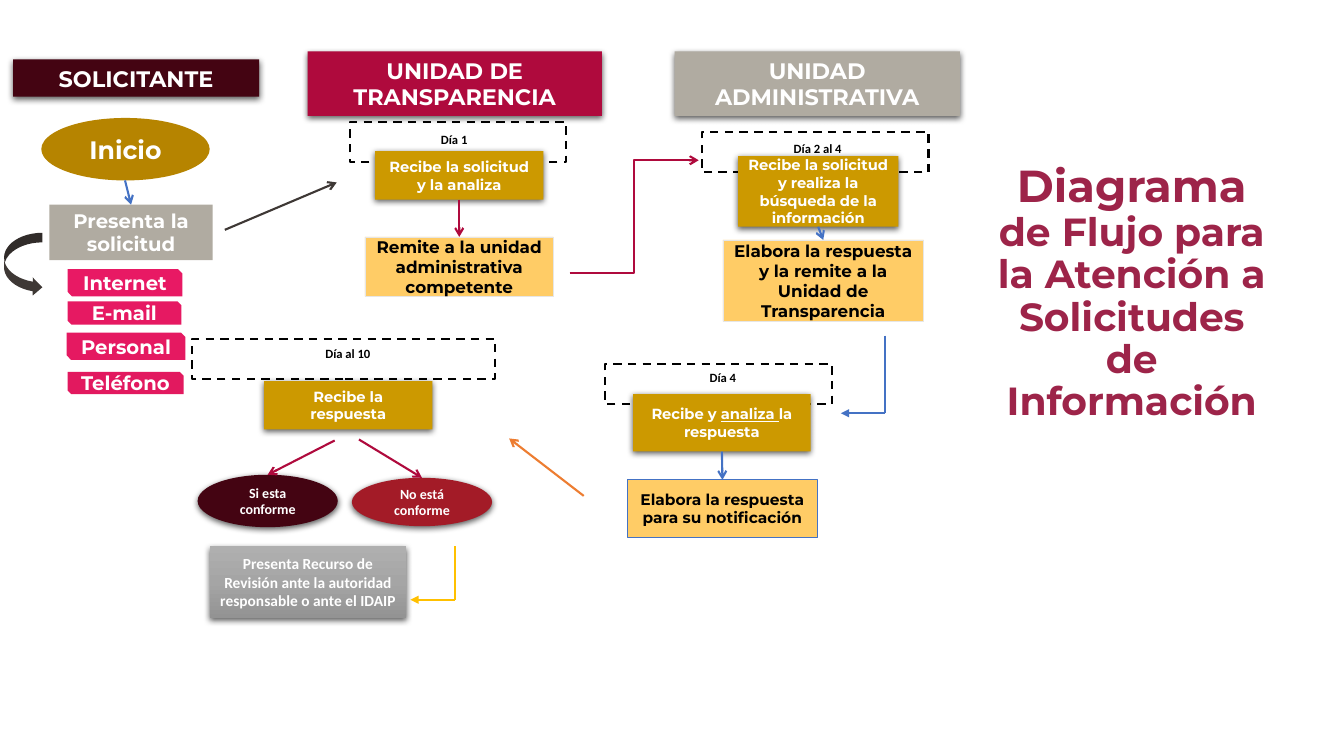
from copy import deepcopy
from lxml import etree
from pptx import Presentation
from pptx.dml.color import RGBColor
from pptx.enum.dml import MSO_LINE
from pptx.enum.shapes import MSO_CONNECTOR as CXN, MSO_SHAPE as SHAPE
from pptx.enum.text import MSO_ANCHOR as ANCHOR, MSO_AUTO_SIZE as AUTO, PP_ALIGN as ALIGN
from pptx.oxml.ns import qn
from pptx.util import Inches, Pt

COLORS = {
    "white": "FFFFFF", "black": "000000", "wine": "440412", "crimson": "AF0A3D",
    "red": "A31B27", "stone": "B0ABA1", "bronze": "B68400", "gold": "CC9900",
    "sand": "FFCC66", "pale": "E6E6E6", "blue": "4472C4", "dark": "3E3835",
    "orange": "ED7D31", "yellow": "FFC000", "title": "9D2449",
    "pink1": "E81964", "pink2": "E61962", "pink3": "E51961", "pink4": "E2195F",
    "gray1": "AFAFAF", "gray2": "A5A5A5", "gray3": "939393",
}
RGB = {name: RGBColor.from_string(value) for name, value in COLORS.items()}


def write(sp, text, size, color="white", font="Montserrat", anchor=ANCHOR.MIDDLE):
    """Centred bold text; parts between bars are underlined."""
    tf = sp.text_frame
    tf.word_wrap = True
    tf.vertical_anchor = anchor
    p = tf.paragraphs[0]
    p.alignment = ALIGN.CENTER
    for i, part in enumerate(text.split("|")):
        r = p.add_run()
        r.text = part
        for key, value in {"name": font, "size": Pt(size), "bold": True}.items():
            setattr(r.font, key, value)
        r.font.color.rgb = RGB[color]
        if i % 2:
            r.font.underline = True


def add_box(preset, box, fill=None, line=None, width=0.5, shadow=False):
    sp = shapes.add_shape(preset, *map(Inches, box))
    sp.shadow.inherit = False
    if fill:
        sp.fill.solid()
        sp.fill.fore_color.rgb = RGB[fill]
    else:
        sp.fill.background()
    if line:
        sp.line.color.rgb = RGB[line]
        sp.line.width = Pt(width)
    else:
        sp.line.fill.background()
    if shadow:
        effects = sp._element.spPr.find(qn("a:effectLst"))
        outer = etree.SubElement(effects, qn("a:outerShdw"), blurRad="57150",
                                 dist="19050", dir="5400000", algn="ctr", rotWithShape="0")
        color = etree.SubElement(outer, qn("a:srgbClr"), val=COLORS["black"])
        etree.SubElement(color, qn("a:alpha"), val="63000")
    return sp


prs = Presentation()
prs.slide_width, prs.slide_height = Inches(13.33), Inches(7.5)
slide = prs.slides.add_slide(prs.slide_layouts[5])
shapes = slide.shapes

# Title
title = shapes.title
for key, value in zip(("left", "top", "width", "height"), (9.77, 0.89, 2.91, 3.37)):
    setattr(title, key, Inches(value))
write(title, "Diagrama de Flujo para la Atención a Solicitudes de Información",
      28, "title", anchor=ANCHOR.BOTTOM)
title.text_frame.auto_size = AUTO.NONE
p = title.text_frame.paragraphs[0]
p.line_spacing = 0.9
rest = p.runs[0]
first = deepcopy(rest._r)
rest._r.addprevious(first)
p.runs[0].text = "Diagrama"
p.runs[0].font.size = Pt(32)
rest.text = rest.text.removeprefix("Diagrama")

# Dashed day frames
for box in [(3.47, 1.21, 2.14, 0.4), (6.96, 1.31, 2.25, 0.4),
            (6, 3.61, 2.25, 0.4), (1.9, 3.36, 3.01, 0.4)]:
    add_box(SHAPE.RECTANGLE, box, line="black", width=1.5).line.dash_style = MSO_LINE.DASH

# Column headers
for text, box, fill in [
    ("SOLICITANTE", (0.13, 0.59, 2.44, 0.37), "wine"),
    ("UNIDAD DE TRANSPARENCIA", (3.05, 0.51, 2.92, 0.64), "crimson"),
    ("UNIDAD ADMINISTRATIVA", (6.69, 0.51, 2.83, 0.64), "stone"),
]:
    write(add_box(SHAPE.RECTANGLE, box, fill, shadow=True), text, 16)

# Applicant: start, request and channels
start = add_box(SHAPE.OVAL, (0.41, 1.17, 1.67, 0.62), "bronze")
write(start, "Inicio", 18)
request = add_box(SHAPE.RECTANGLE, (0.49, 2.03, 1.62, 0.55), "stone")
write(request, "Presenta la solicitud", 14)
for text, box, fill in [
    ("Internet", (0.67, 2.67, 1.14, 0.27), "pink1"),
    ("E-mail", (0.67, 2.99, 1.13, 0.23), "pink2"),
    ("Personal", (0.66, 3.3, 1.18, 0.27), "pink3"),
    ("Teléfono", (0.67, 3.69, 1.15, 0.22), "pink4"),
]:
    write(add_box(SHAPE.SNIP_2_DIAG_RECTANGLE, box, fill), text, 14)
curved = add_box(SHAPE.CURVED_RIGHT_ARROW, (0.04, 2.31, 0.38, 0.63), "dark")
for i, value in enumerate((0.25, 0.47, 0.25)):
    curved.adjustments[i] = value

# Gold steps
steps = {}
for key, text, box in [
    ("receive", "Recibe la solicitud y la analiza", (3.72, 1.5, 1.67, 0.48)),
    ("search", "Recibe la solicitud y realiza la búsqueda de la información",
     (7.32, 1.55, 1.59, 0.7)),
    ("analyse", "Recibe y |analiza |la respuesta", (6.28, 3.91, 1.76, 0.57)),
    ("answer", "Recibe la respuesta", (2.62, 3.78, 1.67, 0.48)),
]:
    steps[key] = add_box(SHAPE.RECTANGLE, box, "gold", shadow=True)
    write(steps[key], text, 10.5)

# Sand steps
for key, text, box, line, size in [
    ("forward", "Remite a la unidad administrativa competente",
     (3.62, 2.35, 1.87, 0.59), "pale", 12),
    ("draft", "Elabora la respuesta y la remite a la Unidad de Transparencia",
     (7.17, 2.38, 1.99, 0.81), "pale", 12),
    ("notify", "Elabora la respuesta para su notificación",
     (6.22, 4.76, 1.89, 0.57), "blue", 11),
]:
    steps[key] = add_box(SHAPE.RECTANGLE, box, "sand", line)
    write(steps[key], text, size, "black")

# Outcomes
for key, text, box, fill in [
    ("no", "No está conforme", (3.49, 4.74, 1.39, 0.48), "red"),
    ("yes", "Si esta conforme", (1.96, 4.71, 1.39, 0.52), "wine"),
]:
    steps[key] = add_box(SHAPE.OVAL, box, fill, shadow=True)
    write(steps[key], text, 10, font="Calibri")

# Appeal with a three-stop gradient
appeal = add_box(SHAPE.RECTANGLE, (2.08, 5.42, 1.95, 0.71), "gray2", shadow=True)
write(appeal, "Presenta Recurso de Revisión ante la autoridad responsable o ante el IDAIP",
      11, font="Calibri")
appeal.fill.gradient()
appeal.fill.gradient_angle = 270
stops = appeal._element.spPr.find(qn("a:gradFill")).find(qn("a:gsLst"))
stops.insert(1, deepcopy(stops[0]))
for stop, position, color in zip(appeal.fill.gradient_stops, (0, 0.5, 1),
                                 ("gray1", "gray2", "gray3")):
    stop.position = position
    stop.color.rgb = RGB[color]

# Connectors: start, end, colour, head, joined shapes
for begin, end, color, head, source, target in [
    ((1.24, 1.79), (1.3, 2.03), "blue", "arrow", None, request),
    ((2.23, 2.28), (3.34, 1.81), "dark", "arrow", None, None),
    ((4.55, 1.98), (4.56, 2.35), "crimson", "arrow", steps["receive"], steps["forward"]),
    ((5.65, 2.71), (6.93, 1.59), "crimson", "elbow", None, None),
    ((8.12, 2.25), (8.17, 2.38), "blue", "arrow", steps["search"], steps["draft"]),
    ((8.78, 3.33), (8.78, 4.1), "blue", None, None, None),
    ((8.78, 4.1), (8.34, 4.1), "blue", "triangle", None, None),
    ((7.16, 4.48), (7.16, 4.76), "blue", "arrow", steps["analyse"], steps["notify"]),
    ((5.79, 4.92), (5.05, 4.35), "orange", "arrow", None, None),
    ((3.32, 4.37), (2.66, 4.71), "crimson", "arrow", None, steps["yes"]),
    ((3.56, 4.36), (4.18, 4.74), "crimson", "arrow", None, steps["no"]),
    ((4.51, 5.42), (4.51, 5.95), "yellow", None, None, None),
    ((4.51, 5.95), (4.07, 5.95), "yellow", "triangle", None, None),
]:
    kind = CXN.ELBOW if head == "elbow" else CXN.STRAIGHT
    cxn = shapes.add_connector(kind, *map(Inches, begin + end))
    cxn.line.color.rgb = RGB[color]
    cxn.line.width = Pt(1.5)
    if head:
        etree.SubElement(cxn.line._get_or_add_ln(), qn("a:tailEnd"),
                         type="triangle" if head == "triangle" else "arrow")
    etree.SubElement(cxn._element.spPr, qn("a:effectLst"))
    if source:
        cxn.begin_connect(source, 2)
    if target:
        cxn.end_connect(target, 0)

# Day labels
for text, box in [
    ("Día 1", (4.14, 1.26, 0.73, 0.26)),
    ("Día 2 al 4", (7.59, 1.35, 1.04, 0.25)),
    ("Día 4", (6.65, 3.62, 1.04, 0.25)),
    ("Día al 10", (2.93, 3.38, 1.04, 0.25)),
]:
    label = shapes.add_textbox(*map(Inches, box))
    write(label, text, 9, "black", "Calibri", ANCHOR.TOP)

prs.save("out.pptx")
